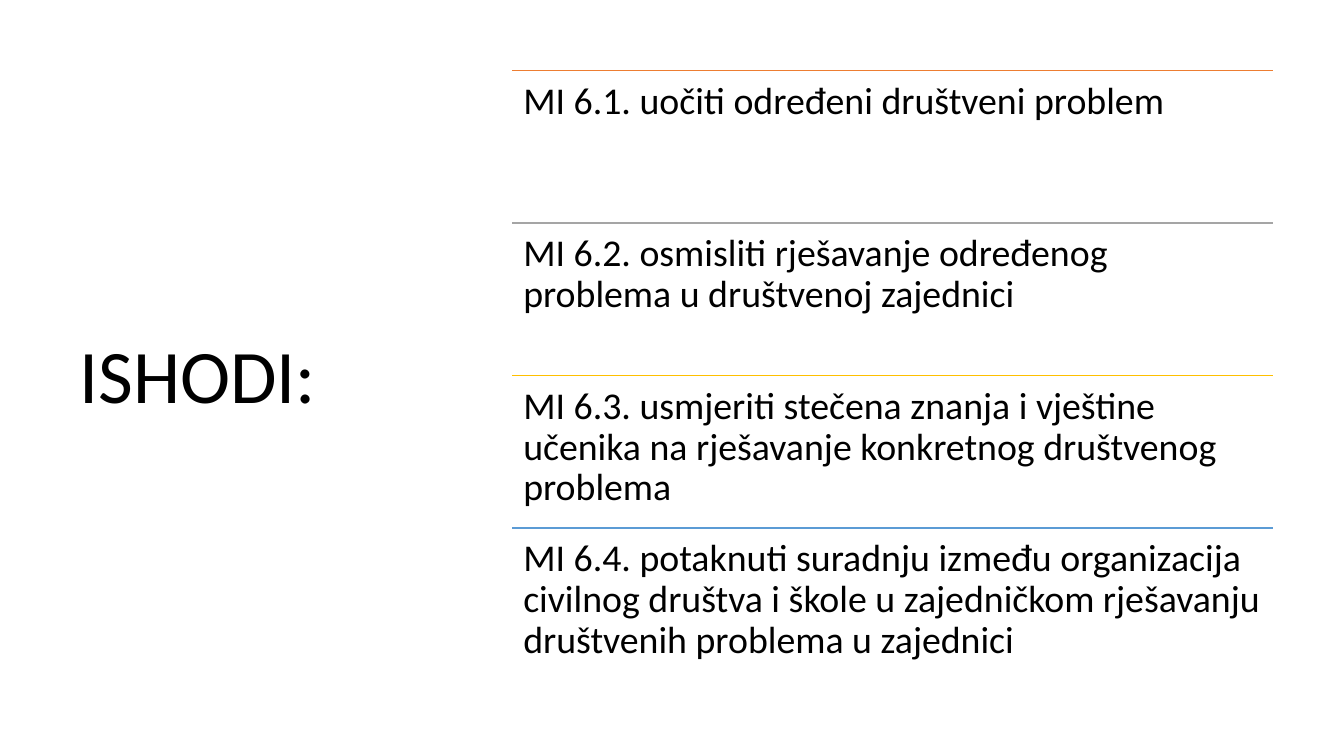
from lxml import etree
from pptx import Presentation
from pptx.dml.color import RGBColor
from pptx.enum.shapes import MSO_CONNECTOR
from pptx.enum.text import MSO_ANCHOR
from pptx.oxml.ns import qn
from pptx.util import Inches, Pt

STRAIGHT = MSO_CONNECTOR.STRAIGHT
TOP, MIDDLE = MSO_ANCHOR.TOP, MSO_ANCHOR.MIDDLE
BLANK_LAYOUT = 6
FONT = "Calibri"
COLORS = {
    "text": "000000",
    "orange": "ED7D31",
    "gray": "A5A5A5",
    "gold": "FFC000",
    "blue": "5B9BD5",
}
OUTCOMES = [
    ("orange", "MI 6.1. uočiti određeni društveni problem"),
    ("gray", "MI 6.2. osmisliti rješavanje određenog problema u društvenoj zajednici"),
    ("gold", "MI 6.3. usmjeriti stečena znanja i vještine učenika na rješavanje "
             "konkretnog društvenog problema"),
    ("blue", "MI 6.4. potaknuti suradnju između organizacija civilnog društva i škole "
             "u zajedničkom rješavanju društvenih problema u zajednici"),
]


def color(name):
    return RGBColor.from_string(COLORS[name])


def add_text(page, box, text, size, anchor, inset_x, inset_y):
    """Place one wrapped paragraph in box (left, top, width, height in inches)."""
    frame = page.shapes.add_textbox(*map(Inches, box)).text_frame
    frame.word_wrap = True
    frame.vertical_anchor = anchor
    frame.margin_left = frame.margin_right = Inches(inset_x)
    frame.margin_top = frame.margin_bottom = Inches(inset_y)
    para = frame.paragraphs[0]
    para.text = text
    para.line_spacing = 0.9
    para.font.name = FONT
    para.font.size = Pt(size)
    para.font.color.rgb = color("text")


def add_rule(page, left, top, width, color_name):
    rule = page.shapes.add_connector(
        STRAIGHT, Inches(left), Inches(top), Inches(left + width), Inches(top))
    rule.line.color.rgb = color(color_name)
    rule.line.width = Pt(1)
    etree.SubElement(rule._element.spPr, qn("a:effectLst"))


def add_title(page, box):
    add_text(page, box, "ISHODI:", 54, MIDDLE, 0.1, 0.05)


def add_outcomes(page, box):
    """Stack the outcomes in equal rows, each under a coloured rule."""
    left, top, width, height = box
    row_height = height / len(OUTCOMES)
    for index, (color_name, text) in enumerate(OUTCOMES):
        row_top = top + index * row_height
        add_rule(page, left, row_top, width, color_name)
        add_text(page, (left, row_top, width, row_height), text, 27, TOP, 0.11, 0.11)


def main():
    deck = Presentation()
    deck.slide_width, deck.slide_height = Inches(13.33), Inches(7.5)
    page = deck.slides.add_slide(deck.slide_layouts[BLANK_LAYOUT])
    add_title(page, (0.69, 0.7, 3.74, 6.11))
    add_outcomes(page, (5.08, 0.7, 7.55, 6.05))
    deck.save("out.pptx")


if __name__ == "__main__":
    main()
